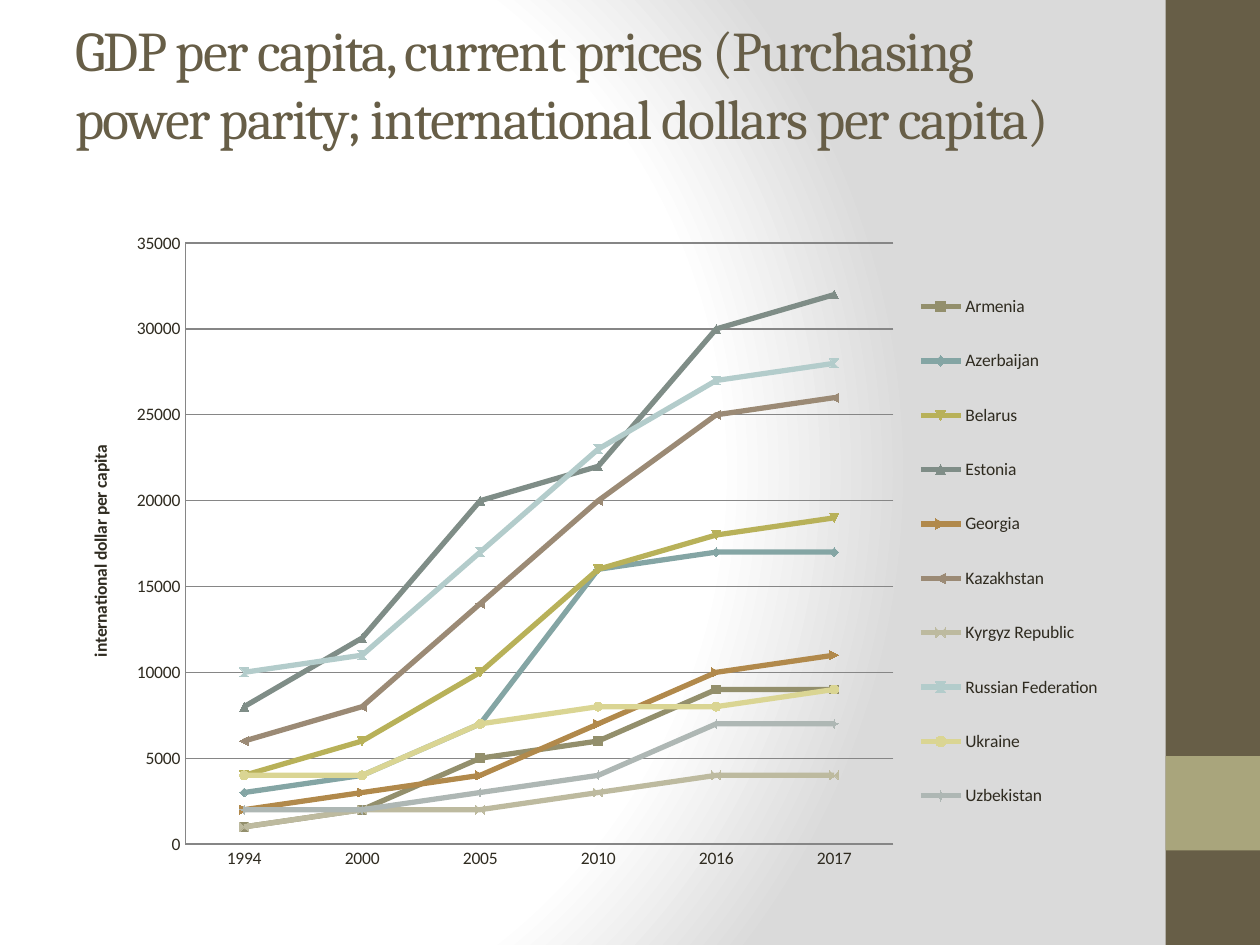
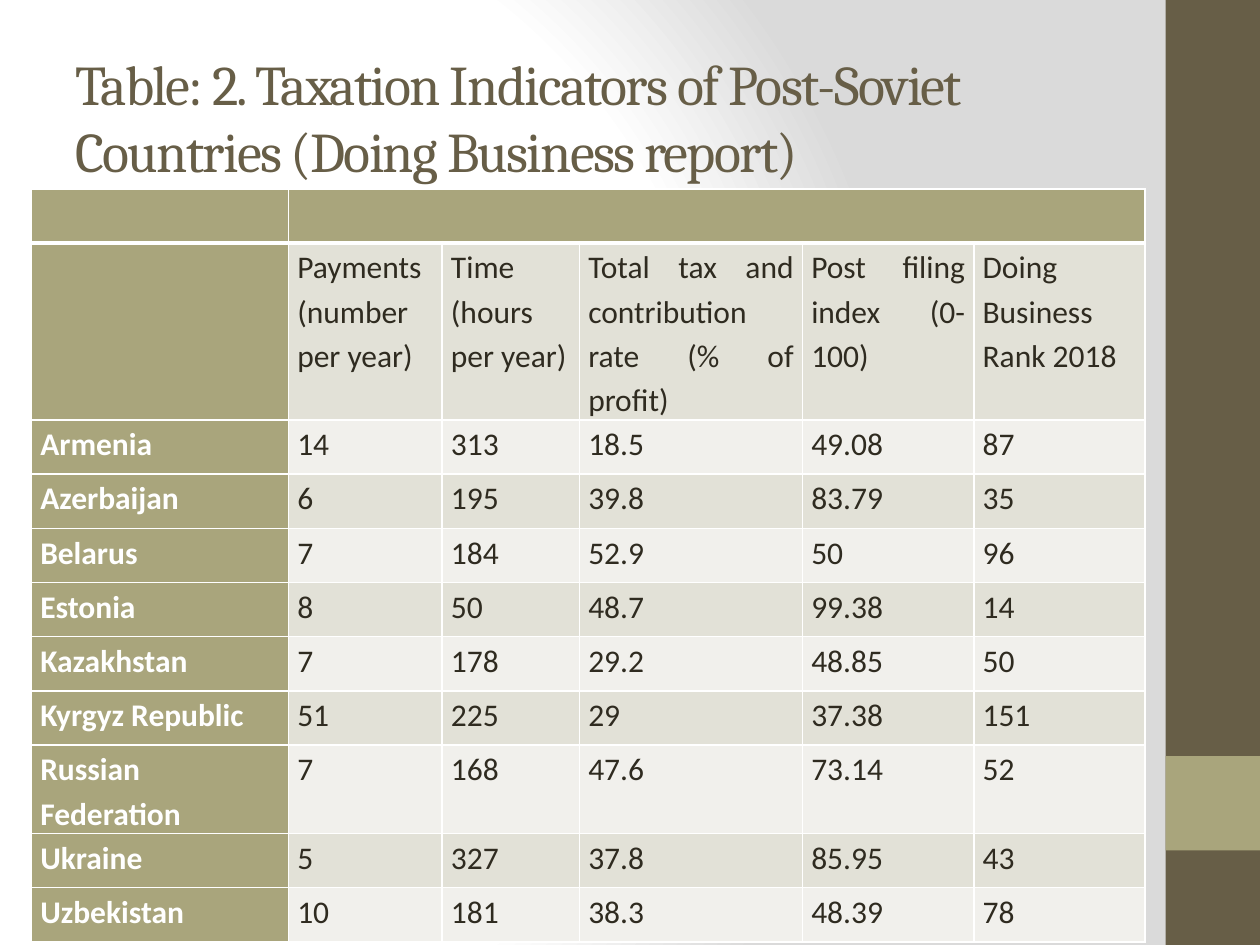
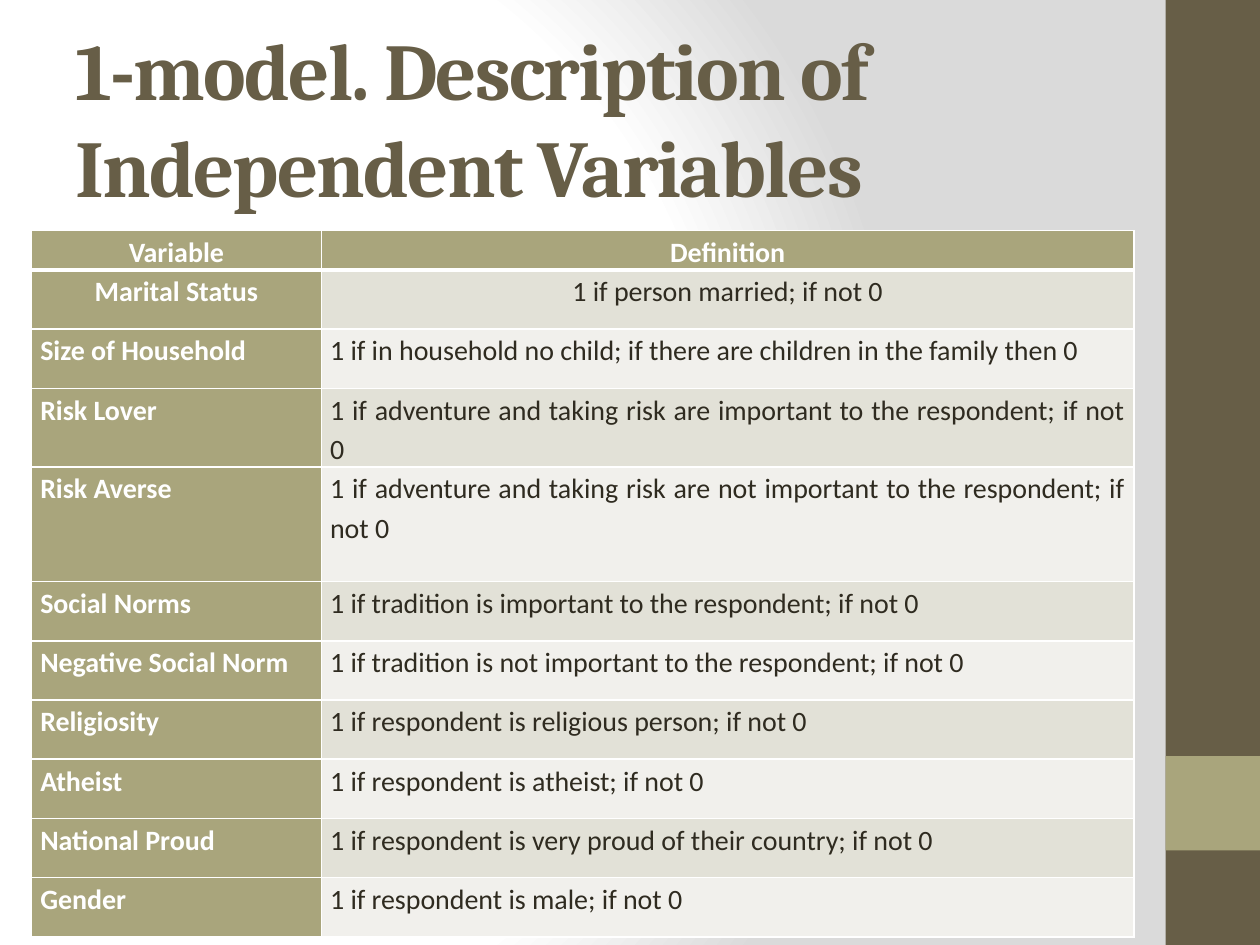
from dataclasses import dataclass

from pptx import Presentation
from pptx.chart.data import CategoryChartData
from pptx.dml.color import RGBColor as RGB
from pptx.enum.chart import XL_CHART_TYPE as ChartType
from pptx.enum.chart import XL_LEGEND_POSITION as LegendPos
from pptx.enum.chart import XL_TICK_MARK as Tick
from pptx.enum.shapes import MSO_SHAPE as Preset
from pptx.enum.text import MSO_ANCHOR as Anchor
from pptx.enum.text import MSO_AUTO_SIZE as AutoSize
from pptx.enum.text import PP_ALIGN as Align
from pptx.oxml import parse_xml
from pptx.oxml.ns import nsdecls, qn
from pptx.util import Inches, Pt


@dataclass(frozen=True)
class Theme:
    brown: str = "675E47"
    olive: str = "A9A57C"
    ink: str = "2F2B20"
    white: str = "FFFFFF"
    backdrop: str = "DADADA"
    band_dark: str = "E2E1D7"
    band_light: str = "F1F0EC"
    grid: str = "868686"
    heading_font: str = "Cambria"
    body_font: str = "Calibri"
    title_size: int = 32
    big_title_size: int = 46
    chart_size: int = 10
    indicator_size: int = 18
    definition_size: int = 16


THEME = Theme()
TITLE_BOX = (0.5, 0.3, 8.33, 1.25)

YEARS = ["1994", "2000", "2005", "2010", "2016", "2017"]
GDP = {  # country: (line colour, values by year)
    "Armenia": ("938F6C", [1000, 2000, 5000, 6000, 9000, 9000]),
    "Azerbaijan": ("84A5A4", [3000, 4000, 7000, 16000, 17000, 17000]),
    "Belarus": ("B8B159", [4000, 6000, 10000, 16000, 18000, 19000]),
    "Estonia": ("7F8D87", [8000, 12000, 20000, 22000, 30000, 32000]),
    "Georgia": ("B1894B", [2000, 3000, 4000, 7000, 10000, 11000]),
    "Kazakhstan": ("9B8A75", [6000, 8000, 14000, 20000, 25000, 26000]),
    "Kyrgyz Republic": ("BDBA9F", [1000, 2000, 2000, 3000, 4000, 4000]),
    "Russian Federation": ("B3CCCB", [10000, 11000, 17000, 23000, 27000, 28000]),
    "Ukraine": ("DAD593", [4000, 4000, 7000, 8000, 8000, 9000]),
    "Uzbekistan": ("AEB7B4", [2000, 2000, 3000, 4000, 7000, 7000]),
}

TAXATION = [
    ["", "", "", "", "", ""],
    ["", "Payments (number per year)", "Time (hours per year)",
     "Total tax and contribution rate (% of profit)",
     "Post filing index (0-100)", "Doing Business Rank 2018"],
    ["Armenia", "14", "313", "18.5", "49.08", "87"],
    ["Azerbaijan", "6", "195", "39.8", "83.79", "35"],
    ["Belarus", "7", "184", "52.9", "50", "96"],
    ["Estonia", "8", "50", "48.7", "99.38", "14"],
    ["Kazakhstan", "7", "178", "29.2", "48.85", "50"],
    ["Kyrgyz Republic", "51", "225", "29", "37.38", "151"],
    ["Russian Federation", "7", "168", "47.6", "73.14", "52"],
    ["Ukraine", "5", "327", "37.8", "85.95", "43"],
    ["Uzbekistan", "10", "181", "38.3", "48.39", "78"],
]

VARIABLES = [
    ["Variable", "Definition"],
    ["Marital Status", "1 if person married; if not 0"],
    ["Size of Household",
     "1 if in household no child; if there are children in the family then 0"],
    ["Risk Lover",
     "1 if adventure and taking risk are important to the respondent; if not 0"],
    ["Risk Averse",
     "1 if adventure and taking risk are not important to the respondent; if not 0"],
    ["Social Norms", "1 if tradition is important to the respondent; if not 0"],
    ["Negative Social Norm",
     "1 if tradition is not important to the respondent; if not 0"],
    ["Religiosity", "1 if respondent is religious person; if not 0"],
    ["Atheist", "1 if respondent is atheist; if not 0"],
    ["National Proud", "1 if respondent is very proud of their country; if not 0"],
    ["Gender", "1 if respondent is male; if not 0"],
]


def assign(target, values):
    for attribute, value in values.items():
        setattr(target, attribute, value)


def set_font(font, size, color, **values):
    assign(font, {"size": Pt(size), "name": THEME.body_font, **values})
    font.color.rgb = RGB.from_string(color)


def set_line(line, color, width):
    line.color.rgb = RGB.from_string(color)
    line.width = Pt(width)


# Shared frame: background, side bands, title
def set_background(master):
    master.background.fill.gradient()
    plain = master.element.find(".//" + qn("a:gradFill"))
    stops = "".join(
        f'<a:gs pos="{percent * 1000}"><a:srgbClr val="{color}"/></a:gs>'
        for percent, color in [(0, THEME.white), (75, THEME.white), (100, THEME.backdrop)])
    glow = parse_xml(
        f'<a:gradFill {nsdecls("a")} rotWithShape="1"><a:gsLst>{stops}</a:gsLst>'
        '<a:path path="circle"><a:fillToRect l="20000" t="50000" r="100000" b="50000"/>'
        "</a:path></a:gradFill>")
    plain.getparent().replace(plain, glow)


def add_side_bands(slide, box=(9.25, 0, 0.75, 7.5)):
    left, top, width, height = box
    for offset, band_height, color in [(0, height, THEME.brown), (6, width, THEME.olive)]:
        band = slide.shapes.add_shape(
            Preset.RECTANGLE, Inches(left), Inches(top + offset),
            Inches(width), Inches(band_height))
        band.shadow.inherit = False
        band.fill.solid()
        band.fill.fore_color.rgb = RGB.from_string(color)
        band.line.fill.background()


def add_title(slide, box, text, size=THEME.title_size, bold=False, lift=0):
    """Centre the title in its box; lift raises it by half that many inches."""
    frame = slide.shapes.add_textbox(*map(Inches, box)).text_frame
    assign(frame, {"word_wrap": True, "auto_size": AutoSize.NONE,
                   "vertical_anchor": Anchor.MIDDLE,
                   "margin_bottom": Inches(0.05 + lift)})
    title = frame.paragraphs[0].add_run()
    title.text = text
    set_font(title.font, size, THEME.brown, name=THEME.heading_font, bold=bold)
    title.font._element.set("spc", "-100")


def add_framed_slide(prs, title, **title_format):
    slide = prs.slides.add_slide(prs.slide_layouts[6])
    add_side_bands(slide)
    add_title(slide, TITLE_BOX, title, **title_format)
    return slide


# Line chart
def set_layout(parent, index, target, area, chart_box):
    """Place a chart part; area is in inches from the chart's corner."""
    for automatic in parent.findall(qn("c:layout")):
        parent.remove(automatic)
    inner = '<c:layoutTarget val="inner"/>' if target == "inner" else ""
    modes = '<c:xMode val="edge"/><c:yMode val="edge"/>'
    sizes = "".join(
        f'<c:{side} val="{length / whole:.4f}"/>'
        for side, length, whole in zip("xywh", area, chart_box[2:] * 2))
    parent.insert(index, parse_xml(
        f'<c:layout {nsdecls("c")}><c:manualLayout>{inner}{modes}{sizes}'
        "</c:manualLayout></c:layout>"))


def add_gdp_chart(slide, box):
    figures = CategoryChartData()
    figures.categories = YEARS
    for country, (_, values) in GDP.items():
        figures.add_series(country, values)
    chart = slide.shapes.add_chart(
        ChartType.LINE_MARKERS, *map(Inches, box), figures).chart
    set_font(chart.font, THEME.chart_size, THEME.ink)
    assign(chart, {"has_title": False, "has_legend": True})
    assign(chart.legend, {"position": LegendPos.RIGHT, "include_in_layout": False})

    # Country lines
    plot = chart.plots[0]
    plot.vary_by_categories = False
    for line, (color, _) in zip(plot.series, GDP.values()):
        line.smooth = False
        set_line(line.format.line, color, 3)

    # Axes
    for axis in (chart.category_axis, chart.value_axis):
        assign(axis, {"major_tick_mark": Tick.NONE, "minor_tick_mark": Tick.NONE})
        set_line(axis.format.line, THEME.grid, 0.75)
    dollars = chart.value_axis
    assign(dollars, {"minimum_scale": 0, "maximum_scale": 35000, "major_unit": 5000,
                     "has_major_gridlines": True, "has_title": True})
    set_line(dollars.major_gridlines.format.line, THEME.grid, 0.75)
    caption = dollars.axis_title.text_frame.paragraphs[0].add_run()
    caption.text = "international dollar per capita"
    set_font(caption.font, THEME.chart_size, THEME.ink, bold=True)

    # Plot and legend areas
    areas = chart.element
    set_layout(areas.find(".//" + qn("c:plotArea")), 0, "inner",
               (0.97, 0.18, 5.62, 4.77), box)
    set_layout(areas.find(".//" + qn("c:legend")), 1, "outer",
               (6.76, 0.33, 1.5, 4.59), box)


# Banded tables
def set_borders(cell, top, bottom):
    properties = cell._tc.get_or_add_tcPr()
    for side, width in {"L": 1, "R": 1, "T": top, "B": bottom}.items():
        properties.append(parse_xml(
            f'<a:ln{side} {nsdecls("a")} w="{Pt(width)}"><a:solidFill>'
            f'<a:srgbClr val="{THEME.white}"/></a:solidFill></a:ln{side}>'))


def fill_cell(cell, text, row, is_heading, size, align):
    set_borders(cell, top=3 if row == 1 else 1, bottom=3 if row == 0 else 1)
    band = THEME.band_dark if row % 2 else THEME.band_light
    cell.fill.solid()
    cell.fill.fore_color.rgb = RGB.from_string(THEME.olive if is_heading else band)
    if not text:
        return
    assign(cell, {"margin_left": Inches(0.07), "margin_right": Inches(0.07),
                  "margin_top": 0, "margin_bottom": 0})
    paragraph = cell.text_frame.paragraphs[0]
    assign(paragraph, {"alignment": align, "line_spacing": 1.15})
    entry = paragraph.add_run()
    entry.text = text
    set_font(entry.font, size, THEME.white if is_heading else THEME.ink, bold=is_heading)


def add_banded_table(slide, box, widths, heights, rows, size, centred_rows=0):
    table = slide.shapes.add_table(len(rows), len(widths), *map(Inches, box)).table
    for column, width in zip(table.columns, widths):
        column.width = Inches(width)
    for table_row, height in zip(table.rows, heights):
        table_row.height = Inches(height)
    for row, texts in enumerate(rows):
        align = Align.CENTER if row < centred_rows else Align.JUSTIFY
        for column, text in enumerate(texts):
            fill_cell(table.cell(row, column), text, row, row == 0 or column == 0,
                      size, align)
    return table


def main():
    prs = Presentation()
    assign(prs, {"slide_width": Inches(10), "slide_height": Inches(7.5)})
    set_background(prs.slide_master)

    # GDP per capita
    slide = add_framed_slide(
        prs, "GDP per capita, current prices (Purchasing power parity; "
        "international dollars per capita)", lift=0.53)
    add_gdp_chart(slide, (0.5, 1.75, 8.33, 5.25))

    # Taxation indicators
    slide = add_framed_slide(
        prs, "Table: 2. Taxation Indicators of Post-Soviet Countries "
        "(Doing Business report)")
    taxation = add_banded_table(
        slide, (0.25, 1.5, 8.83, 5.96), [2.04, 1.22, 1.09, 1.77, 1.36, 1.36],
        [0.43, 1.35] + [0.43] * 9, TAXATION, THEME.indicator_size)
    taxation.cell(0, 1).merge(taxation.cell(0, 5))

    # Independent variables
    slide = add_framed_slide(
        prs, "1-model. Description of Independent Variables",
        size=THEME.big_title_size, bold=True)
    add_banded_table(
        slide, (0.25, 1.83, 8.75, 5.57), [2.3, 6.45],
        [0.21] + [0.47] * 3 + [0.91] + [0.47] * 6, VARIABLES,
        THEME.definition_size, centred_rows=2)

    prs.save("out.pptx")


if __name__ == "__main__":
    main()
